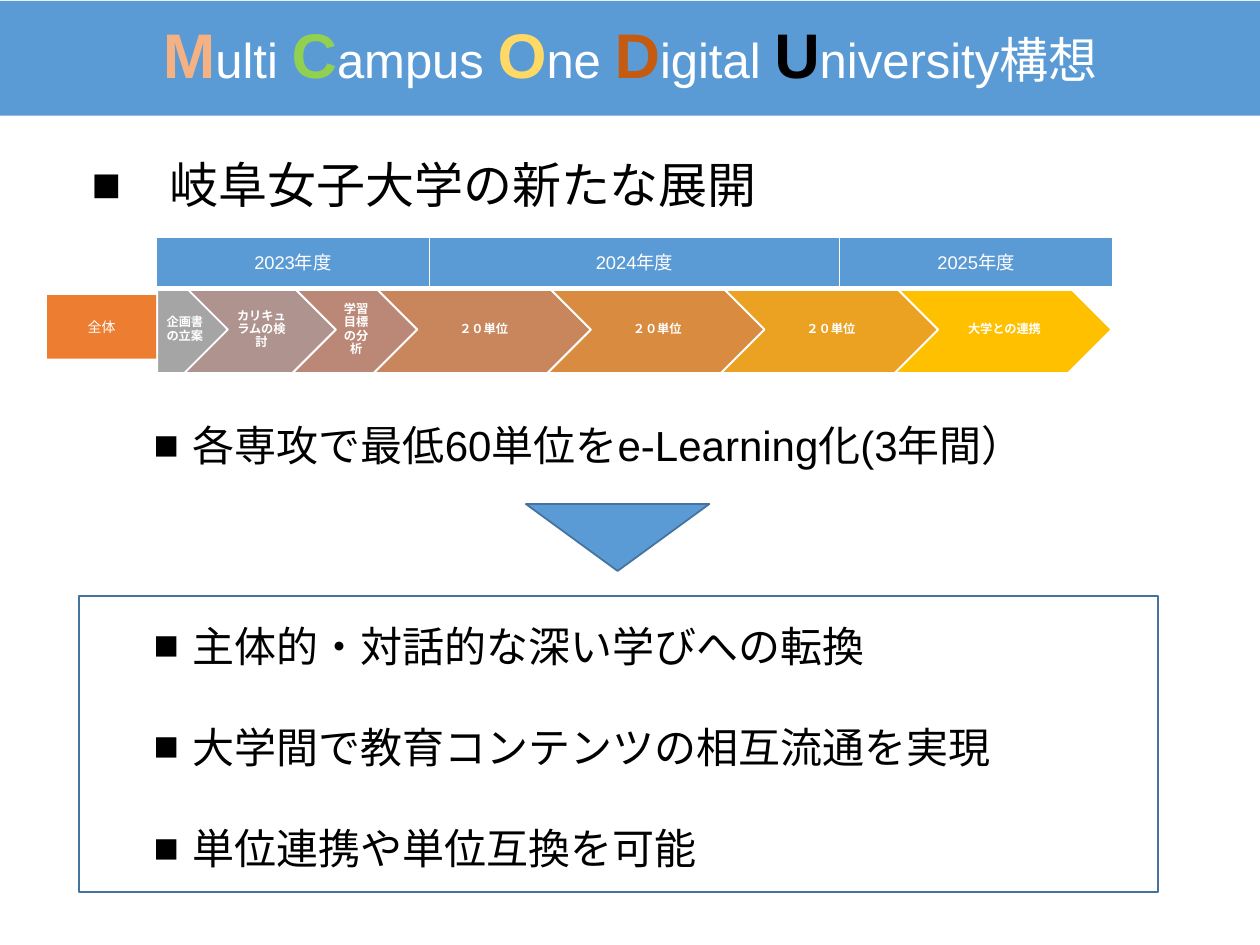
from collections import namedtuple
from dataclasses import dataclass

from lxml.etree import SubElement
from pptx import Presentation
from pptx.dml.color import RGBColor
from pptx.enum.lang import MSO_LANGUAGE_ID
from pptx.enum.shapes import MSO_SHAPE
from pptx.enum.text import MSO_ANCHOR, PP_ALIGN
from pptx.oxml.ns import qn
from pptx.util import Cm, Pt

Box = namedtuple("Box", "left top width height")


@dataclass(frozen=True)
class Theme:
    latin: str = "Arial"
    japanese: str = "Noto Sans CJK JP"
    blue: str = "5B9BD5"
    outline: str = "43739E"
    orange: str = "ED7D31"
    white: str = "FFFFFF"
    black: str = "000000"
    steps: tuple = ("A5A5A5", "AF938F", "BB8776", "C9865C", "D98B3F", "EBA121", "FFC000")
    initials: tuple = ("F4B183", "92D050", "FFD966", "C55A11", "000000")
    initial_size: float = 36
    title_size: float = 28
    body_size: float = 24
    year_size: float = 10.5
    label_size: float = 8
    step_size: float = 7


THEME = Theme()
TITLE_WORDS = ("Multi ", "Campus ", "One ", "Digital ", "University構想")
YEARS = (("2023年度", 5.51), ("2024年度", 8.26), ("2025年度", 5.51))
STEPS = (
    ("企画書の立案", 1.42), ("カリキュラムの検討", 3.05), ("学習目標の分析", 2.51),
    ("２０単位", 4.37), ("２０単位", 4.37), ("２０単位", 4.37), ("大学との連携", 4.37),
)
STEP_OVERLAP = 0.87
OUTCOMES = (
    "主体的・対話的な深い学びへの転換",
    "大学間で教育コンテンツの相互流通を実現",
    "単位連携や単位互換を可能",
)


def in_cm(box):
    return [Cm(length) for length in box]


def style_run(run, size, color, face=THEME.latin, bold=False):
    run.font.size = Pt(size)
    run.font.bold = bold
    run.font.name = face
    run.font.language_id = MSO_LANGUAGE_ID.JAPANESE
    run.font.color.rgb = RGBColor.from_string(color)
    SubElement(run.font._element, qn("a:ea"), typeface=face)


def add_panel(slide, preset, box, fill=None, line=None):
    panel = slide.shapes.add_shape(preset, *in_cm(box))
    panel.shadow.inherit = False
    if fill:
        panel.fill.solid()
        panel.fill.fore_color.rgb = RGBColor.from_string(fill)
    else:
        panel.fill.background()
    if line:
        panel.line.color.rgb = RGBColor.from_string(line)
        panel.line.width = Pt(1)
    else:
        panel.line.fill.background()
    return panel


def write_label(frame, text, size, face=THEME.latin, bold=False):
    frame.text = text
    frame.word_wrap = True
    frame.vertical_anchor = MSO_ANCHOR.MIDDLE
    paragraph = frame.paragraphs[0]
    paragraph.alignment = PP_ALIGN.CENTER
    style_run(paragraph.runs[0], size, THEME.white, face, bold)
    return paragraph


def add_title(slide, box):
    title = slide.shapes.title
    title.left, title.top, title.width, title.height = in_cm(box)
    title.fill.solid()
    title.fill.fore_color.rgb = RGBColor.from_string(THEME.blue)
    title.text_frame.vertical_anchor = MSO_ANCHOR.MIDDLE
    paragraph = title.text_frame.paragraphs[0]
    paragraph.alignment = PP_ALIGN.CENTER
    paragraph.line_spacing = 0.9
    for word, color in zip(TITLE_WORDS, THEME.initials):
        initial, rest = paragraph.add_run(), paragraph.add_run()
        initial.text, rest.text = word[0], word[1:]
        style_run(initial, THEME.initial_size, color, bold=True)
        style_run(rest, THEME.title_size, THEME.white)


def add_bullets(slide, box, items, size, indent, face=THEME.latin, line=None, gap=0):
    """Square-bulleted list; line and gap are the line height and space between items in points."""
    frame = slide.shapes.add_textbox(*in_cm(box)).text_frame
    frame.word_wrap = True
    frame.text = "\n".join(items)
    for index, paragraph in enumerate(frame.paragraphs):
        properties = paragraph._p.get_or_add_pPr()
        properties.set("marL", str(Cm(indent)))
        properties.set("indent", str(-Cm(indent)))
        SubElement(properties, qn("a:buFont"), typeface=THEME.latin)
        SubElement(properties, qn("a:buChar"), char="■")
        if line:
            paragraph.line_spacing = Pt(line)
        if index:
            paragraph.space_before = Pt(gap)
        style_run(paragraph.runs[0], size, THEME.black, face)


def set_border(cell, side, width):
    border = SubElement(cell._tc.get_or_add_tcPr(), qn(f"a:{side}"), w=str(Pt(width)))
    fill = SubElement(border, qn("a:solidFill"))
    SubElement(fill, qn("a:srgbClr"), val=THEME.white)


def add_years(slide, box):
    table = slide.shapes.add_table(1, len(YEARS), *in_cm(box)).table
    table.first_row = table.horz_banding = False
    for column, cell, (year, width) in zip(table.columns, table.rows[0].cells, YEARS):
        column.width = Cm(width)
        write_label(cell.text_frame, year, THEME.year_size)
        cell.vertical_anchor = MSO_ANCHOR.MIDDLE
        for side, border_width in (("lnL", 1), ("lnR", 1), ("lnT", 1), ("lnB", 3)):
            set_border(cell, side, border_width)
        cell.fill.solid()
        cell.fill.fore_color.rgb = RGBColor.from_string(THEME.blue)


def add_steps(slide, box):
    left = box.left
    for index, ((name, width), color) in enumerate(zip(STEPS, THEME.steps)):
        preset = MSO_SHAPE.CHEVRON if index else MSO_SHAPE.PENTAGON
        step = add_panel(slide, preset, Box(left, box.top, width, box.height),
                         color, THEME.white)
        frame = step.text_frame
        frame.margin_left, frame.margin_right = Cm(0.08), Cm(0.03)
        frame.margin_top = frame.margin_bottom = Cm(0.05)
        write_label(frame, name, THEME.step_size, bold=True).line_spacing = 0.9
        left += width - STEP_OVERLAP


def add_schedule(slide, box):
    label_width, years_height, steps_top = 2.2, 1.04, 0.99
    timeline_left = box.left + label_width
    timeline_width = box.width - label_width
    add_steps(slide, Box(timeline_left + 0.02, box.top + steps_top,
                         timeline_width, box.height - steps_top))
    add_years(slide, Box(timeline_left, box.top, timeline_width, years_height))
    label = add_panel(slide, MSO_SHAPE.RECTANGLE,
                      Box(box.left, box.top + 1.17, label_width, 1.28), THEME.orange)
    write_label(label.text_frame, "全体", THEME.label_size, THEME.japanese)


def add_outcomes(slide, box):
    add_panel(slide, MSO_SHAPE.RECTANGLE, box, line=THEME.outline)
    add_bullets(slide, Box(box.left + 1.25, box.top + 0.35, 19.25, box.height - 0.35),
                OUTCOMES, THEME.body_size, 0.79, line=29, gap=28.8)


def main():
    presentation = Presentation()
    presentation.slide_width, presentation.slide_height = Cm(25.4), Cm(19.05)
    slide = presentation.slides.add_slide(presentation.slide_layouts[5])
    add_title(slide, Box(0, 0.02, 25.4, 2.31))
    add_bullets(slide, Box(1.6, 3, 21.29, 1.45), ["岐阜女子大学の新たな展開"],
                THEME.title_size, 1.57, THEME.japanese)
    add_schedule(slide, Box(0.95, 4.78, 21.48, 2.74))
    add_bullets(slide, Box(2.85, 8.33, 19.25, 1.3),
                ["各専攻で最低60単位をe-Learning化(3年間）"], THEME.body_size, 0.79, line=29)
    arrow = add_panel(slide, MSO_SHAPE.ISOSCELES_TRIANGLE, Box(10.6, 10.16, 3.7, 1.35),
                      THEME.blue, THEME.outline)
    arrow.rotation = 180
    add_outcomes(slide, Box(1.6, 12.02, 21.75, 5.97))
    presentation.save("out.pptx")


if __name__ == "__main__":
    main()
